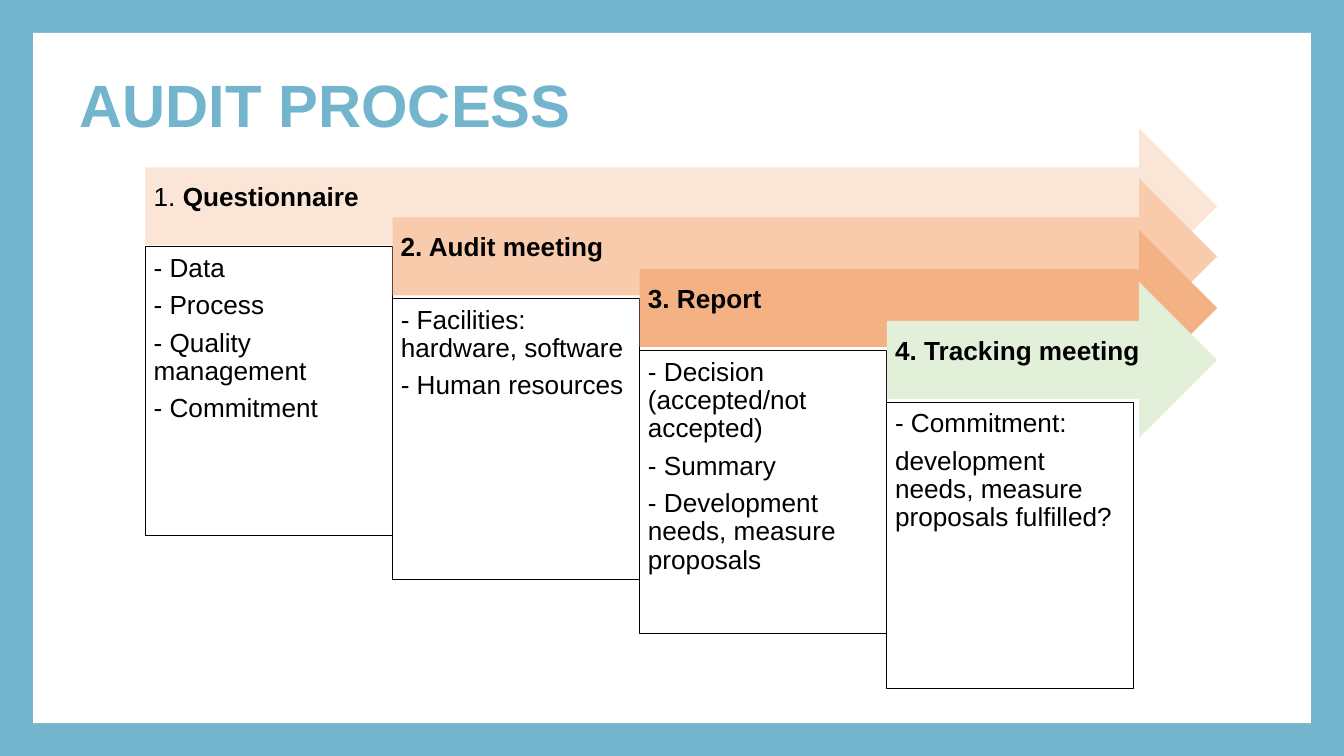
import dataclasses

import pptx
import pptx.dml.color
import pptx.enum.shapes
import pptx.enum.text
import pptx.util

Pt = pptx.util.Pt
RGBColor = pptx.dml.color.RGBColor
MSO_SHAPE = pptx.enum.shapes.MSO_SHAPE
MSO_ANCHOR = pptx.enum.text.MSO_ANCHOR


@dataclasses.dataclass(frozen=True)
class Theme:
    font: str = "Arial"
    accent: str = "72B5CC"
    paper: str = "FFFFFF"
    ink: str = "000000"
    arrows: tuple = ("FBE5D6", "F8CBAD", "F4B183", "E2F0D9")
    title_size: int = 32
    body_size: int = 14


theme = Theme()


def add_box(kind, left, top, width, height, fill, outlined=False):
    shape = slide.shapes.add_shape(kind, Pt(left), Pt(top), Pt(width), Pt(height))
    shape.shadow.inherit = False
    shape.fill.solid()
    shape.fill.fore_color.rgb = RGBColor.from_string(fill)
    if outlined:
        shape.line.color.rgb = RGBColor.from_string(theme.ink)
        shape.line.width = Pt(0.5)
    else:
        shape.line.fill.background()
    return shape


def write(shape, paragraphs, insets, anchor, size, color, space_after=0):
    frame = shape.text_frame
    frame.word_wrap = True
    frame.auto_size = pptx.enum.text.MSO_AUTO_SIZE.NONE
    frame.vertical_anchor = anchor
    frame.margin_left, frame.margin_top, frame.margin_right, frame.margin_bottom = map(Pt, insets)
    for index, runs in enumerate(paragraphs):
        paragraph = frame.add_paragraph() if index else frame.paragraphs[0]
        paragraph.alignment = pptx.enum.text.PP_ALIGN.LEFT
        paragraph.line_spacing = 0.9
        paragraph.space_before = Pt(0)
        paragraph.space_after = Pt(space_after)
        for text, bold in runs:
            run = paragraph.add_run()
            run.text = text
            run.font.name = theme.font
            run.font.size = Pt(size)
            run.font.bold = bold
            run.font.color.rgb = RGBColor.from_string(color)


presentation = pptx.Presentation()
presentation.slide_width = Pt(720)
presentation.slide_height = Pt(405)
slide = presentation.slides.add_slide(presentation.slide_layouts[5])
slide.background.fill.solid()
slide.background.fill.fore_color.rgb = RGBColor.from_string(theme.accent)

add_box(MSO_SHAPE.RECTANGLE, 17.7, 17.6, 684.6, 369.8, theme.paper)

steps = [
    ([("1. ", False), ("Questionnaire", True)], 68.8, 154.8,
     ["- Data", "- Process", "- Quality management", "- Commitment"]),
    ([("2. Audit meeting", True)], 95.6, 150.5,
     ["- Facilities: hardware, software", "- Human resources"]),
    ([("3. Report", True)], 123.3, 151.8,
     ["- Decision (accepted/not accepted)", "- Summary",
      "- Development needs, measure proposals"]),
    ([("4. Tracking meeting", True)], 151.1, 153.3,
     ["- Commitment:", "development needs, measure proposals fulfilled?"]),
]
first_left, arrow_tip, arrow_height = 77.9, 652, 83.5
column_width = 132.4
first_box_top, box_step = 132.1, 27.8

for index, (heading, arrow_top, box_height, items) in enumerate(steps):
    left = first_left + index * column_width
    arrow = add_box(MSO_SHAPE.RIGHT_ARROW, left, arrow_top, arrow_tip - left,
                    arrow_height, theme.arrows[index])
    write(arrow, [heading], (4.4, 4.4, 19, 13.2), MSO_ANCHOR.MIDDLE,
          theme.body_size, theme.ink, 4.9)
    box = add_box(MSO_SHAPE.RECTANGLE, left, first_box_top + index * box_step,
                  column_width, box_height, theme.paper, outlined=True)
    write(box, [[(item, False)] for item in items], (4.4, 4.4, 4.4, 4.4),
          MSO_ANCHOR.TOP, theme.body_size, theme.ink, 4.9)

title = slide.shapes.title
title.left, title.top, title.width, title.height = Pt(35.4), Pt(26.4), Pt(607.7), Pt(62.6)
write(title, [[("AUDIT PROCESS", True)]], (7.2, 3.6, 7.2, 3.6), MSO_ANCHOR.MIDDLE,
      theme.title_size, theme.accent)
title.element.getparent().append(title.element)

presentation.save("out.pptx")
